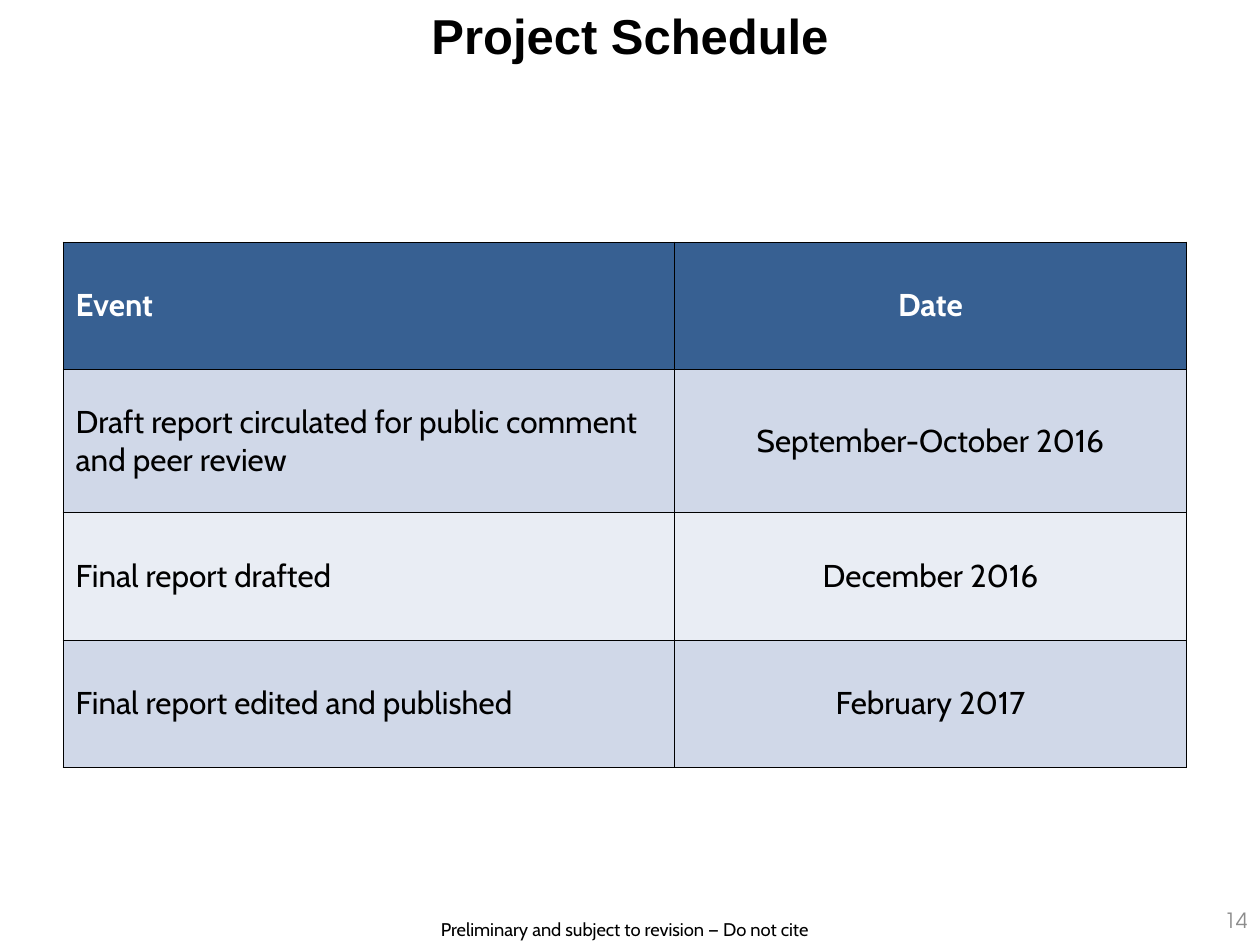
from dataclasses import dataclass

from lxml.etree import SubElement
from pptx import Presentation
from pptx.dml.color import RGBColor
from pptx.enum.text import MSO_ANCHOR, PP_ALIGN
from pptx.oxml.ns import qn
from pptx.util import Inches, Pt


@dataclass(frozen=True)
class Theme:
    ink: str = "000000"
    muted: str = "8C8C8C"
    white: str = "FFFFFF"
    header: str = "376092"
    bands: tuple = ("D0D8E8", "E9EDF4")
    title_font: str = "Arial"
    body_font: str = "Cabin"
    number_font: str = "TeX Gyre Adventor"
    title_size: float = 28
    table_size: float = 18
    number_size: float = 12
    footer_size: float = 10.5
    border_width: float = 0.5


def apply_format(target, values):
    for name, value in values.items():
        setattr(target, name, value)


class SlideBuilder:
    def __init__(self, page, theme):
        self.page = page
        self.theme = theme

    def fill_text(self, frame, text, font, size, color, bold=False, **para_format):
        para = frame.paragraphs[0]
        apply_format(para, para_format)
        span = para.add_run()
        span.text = text
        apply_format(span.font, {"name": font, "size": Pt(size), "bold": bold})
        span.font.color.rgb = RGBColor.from_string(color)

    def text(self, place, text, style, frame_format=None, **para_format):
        box = self.page.shapes.add_textbox(*map(Inches, place))
        apply_format(box.text_frame, {"word_wrap": True, **(frame_format or {})})
        self.fill_text(box.text_frame, text, *style, **para_format)

    def border(self, cell):
        properties = cell._tc.get_or_add_tcPr()
        # Borders must come before the cell fill
        for index, side in enumerate(("a:lnL", "a:lnR", "a:lnT", "a:lnB")):
            line = SubElement(properties, qn(side), w=str(Pt(self.theme.border_width)))
            fill = SubElement(line, qn("a:solidFill"))
            SubElement(fill, qn("a:srgbClr"), val=self.theme.ink)
            properties.insert(index, line)

    def table(self, place, widths, heights, rows):
        theme = self.theme
        frame = self.page.shapes.add_table(len(rows), len(widths), *map(Inches, place))
        table = frame.table
        for column, width in zip(table.columns, widths):
            column.width = Inches(width)
        for row, height in zip(table.rows, heights):
            row.height = Inches(height)
        alignments = (PP_ALIGN.LEFT, PP_ALIGN.CENTER)
        for r, values in enumerate(rows):
            is_header = r == 0
            fill = theme.header if is_header else theme.bands[(r - 1) % 2]
            color = theme.white if is_header else theme.ink
            for c, value in enumerate(values):
                cell = table.cell(r, c)
                cell.vertical_anchor = MSO_ANCHOR.MIDDLE
                cell.fill.solid()
                cell.fill.fore_color.rgb = RGBColor.from_string(fill)
                self.border(cell)
                self.fill_text(cell.text_frame, value, theme.body_font,
                               theme.table_size, color, is_header,
                               alignment=alignments[c])


def main():
    deck = Presentation()
    apply_format(deck, {"slide_width": Inches(10), "slide_height": Inches(7.5)})
    theme = Theme()
    slide = SlideBuilder(deck.slides.add_slide(deck.slide_layouts[6]), theme)

    # Footer
    slide.text((1.99, 7.24, 5.97, 0.28),
               "Preliminary and subject to revision — Do not cite ",
               (theme.body_font, theme.footer_size, theme.ink),
               alignment=PP_ALIGN.CENTER)

    # Title
    slide.text((0, 0, 10, 0.99), "Project Schedule",
               (theme.title_font, theme.title_size, theme.ink, True),
               {"margin_left": Inches(0.2), "margin_top": Inches(0.1),
                "margin_right": Inches(0.2), "margin_bottom": Inches(0.2)},
               alignment=PP_ALIGN.CENTER, line_spacing=0.9)

    # Page number
    slide.text((7.67, 7.1, 2.33, 0.4), "14",
               (theme.number_font, theme.number_size, theme.muted),
               {"vertical_anchor": MSO_ANCHOR.MIDDLE}, alignment=PP_ALIGN.RIGHT)

    # Schedule table
    slide.table((0.5, 1.92, 8.92, 4.18), (4.85, 4.07), (1.01, 1.14, 1.01, 1.01), (
        ("Event", "Date"),
        ("Draft report circulated for public comment and peer review",
         "September-October 2016"),
        ("Final report drafted", "December 2016"),
        ("Final report edited and published", "February 2017"),
    ))

    deck.save("out.pptx")


if __name__ == "__main__":
    main()
